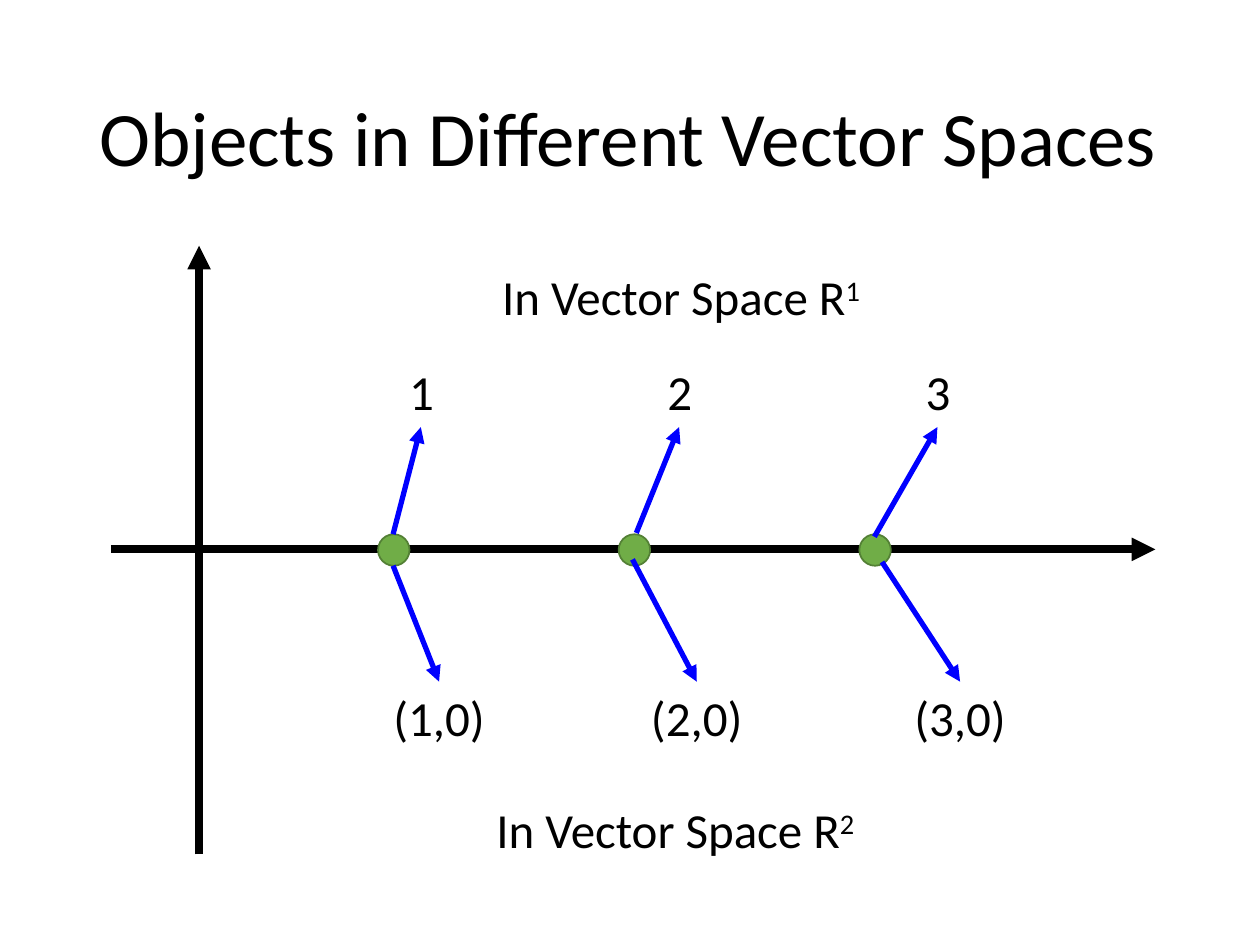
from lxml.etree import SubElement
from pptx import Presentation
from pptx.dml.color import RGBColor
from pptx.enum.shapes import MSO_CONNECTOR, MSO_SHAPE
from pptx.enum.text import MSO_ANCHOR, PP_ALIGN
from pptx.oxml.ns import qn
from pptx.util import Inches, Pt

COLORS = {"ink": "000000", "arrow": "0000FF", "dot": "70AD47", "rim": "538035"}


def color(name):
    return RGBColor.from_string(COLORS[name])


class Canvas:
    font = "Calibri"

    def __init__(self, slide):
        self.slide = slide

    def text(self, words, box, size=28, align=PP_ALIGN.CENTER,
             anchor=MSO_ANCHOR.TOP, power=None):
        """Add a text box; power is an optional superscript at the end."""
        frame = self.slide.shapes.add_textbox(*map(Inches, box)).text_frame
        frame.word_wrap = True
        frame.vertical_anchor = anchor
        para = frame.paragraphs[0]
        para.alignment = align
        para.font.name = self.font
        para.font.size = Pt(size)
        para.font.color.rgb = color("ink")
        para.add_run().text = words
        if power:
            run = para.add_run()
            run.text = power
            run.font._element.set("baseline", "30000")
        return para

    def dot(self, left, top, size):
        shape = self.slide.shapes.add_shape(
            MSO_SHAPE.OVAL, *map(Inches, (left, top, size, size)))
        shape.shadow.inherit = False
        shape.fill.solid()
        shape.fill.fore_color.rgb = color("dot")
        shape.line.color.rgb = color("rim")
        shape.line.width = Pt(1)

    def arrow(self, start, end, name="arrow", width=3):
        line = self.slide.shapes.add_connector(
            MSO_CONNECTOR.STRAIGHT, *map(Inches, start + end))
        line.line.color.rgb = color(name)
        line.line.width = Pt(width)
        SubElement(line.line._get_or_add_ln(), qn("a:tailEnd"), type="triangle")
        SubElement(line._element.spPr, qn("a:effectLst"))


def main():
    deck = Presentation()
    deck.slide_width, deck.slide_height = Inches(10), Inches(7.5)
    canvas = Canvas(deck.slides.add_slide(deck.slide_layouts[6]))

    canvas.arrow((0.88, 4.36), (9.17, 4.36), "ink", 4.5)
    title = canvas.text("Objects in Different Vector Spaces",
                        (0.69, 0.4, 8.62, 1.45), 44, PP_ALIGN.LEFT,
                        MSO_ANCHOR.MIDDLE)
    title.line_spacing = 0.9
    for i in range(3):
        canvas.dot(3 + 1.91 * i, 4.24, 0.25)

    canvas.text("In Vector Space R", (3.87, 2.07, 3.07, 0.57), power="1")
    canvas.text("In Vector Space R", (3.65, 6.3, 3.42, 0.57), power="2")
    canvas.arrow((1.58, 6.78), (1.58, 1.95), "ink", 4.5)

    # Where the up and down arrows leave each dot, and the pair label's width
    points = [((3.12, 4.24), (3.12, 4.49), 0.97),
              ((5.05, 4.23), (5.02, 4.44), 0.96),
              ((6.94, 4.26), (7, 4.46), 1.04)]
    for i, (up, down, width) in enumerate(points):
        left = 3 + 2.05 * i
        canvas.text(f"{i + 1}", (left, 2.82, 0.69, 0.57))
        canvas.text(f"({i + 1},0)", (left, 5.41, width, 0.57))
        canvas.arrow(up, (left + 0.34, 3.39))
        canvas.arrow(down, (left + width / 2, 5.41))

    deck.save("out.pptx")


if __name__ == "__main__":
    main()
